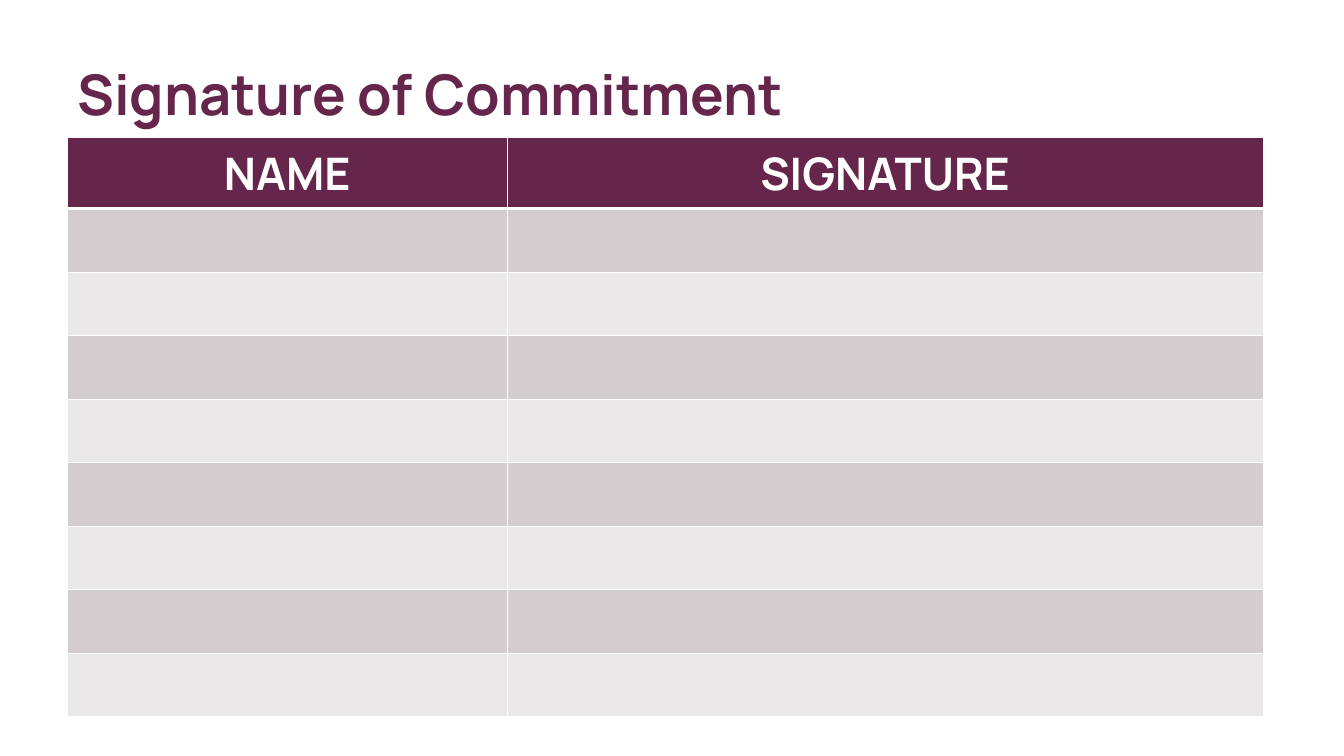
from dataclasses import dataclass

from lxml import etree
from pptx import Presentation
from pptx import util as u
from pptx.dml.color import RGBColor
from pptx.enum import text
from pptx.oxml import ns

PLUM = RGBColor(0x66, 0x25, 0x4A)
WHITE = RGBColor(0xFF, 0xFF, 0xFF)
DARK_BAND = RGBColor(0xD3, 0xCD, 0xD0)
LIGHT_BAND = RGBColor(0xEA, 0xE8, 0xE9)

LEFT = u.Inches(0.67)
HEADER_HEIGHT = u.Inches(0.71)
SIGNER_HEIGHT = u.Inches(0.63)
SIGNER_COUNT = 8


@dataclass(frozen=True)
class Column:
    heading: str
    width: u.Length


COLUMNS = [
    Column("NAME", u.Inches(4.36)),
    Column("SIGNATURE", u.Inches(7.5)),
]


def write(paragraph, wording: str, size: int, color: RGBColor) -> None:
    run = paragraph.add_run()
    run.text = wording
    font_format = {"name": "Manrope", "size": u.Pt(size), "bold": True}
    for attribute, value in font_format.items():
        setattr(run.font, attribute, value)
    run.font.color.rgb = color


def add_borders(cell, top: int, bottom: int) -> None:
    """Draw white cell edges; widths are in points."""
    properties = cell._tc.get_or_add_tcPr()
    for side, width in {"L": 1, "R": 1, "T": top, "B": bottom}.items():
        edge = etree.SubElement(properties, ns.qn(f"a:ln{side}"), w=str(u.Pt(width)))
        fill = etree.SubElement(edge, ns.qn("a:solidFill"))
        etree.SubElement(fill, ns.qn("a:srgbClr"), val=str(WHITE))


def style_cell(cell, row: int) -> None:
    add_borders(cell, top=3 if row == 1 else 1, bottom=3 if row == 0 else 1)
    cell.fill.solid()
    band = DARK_BAND if row % 2 else LIGHT_BAND
    cell.fill.fore_color.rgb = PLUM if row == 0 else band


def add_title(slide) -> None:
    frame = slide.shapes.add_textbox(
        LEFT, u.Inches(0.3), u.Inches(12), u.Inches(1.25)
    ).text_frame
    frame.word_wrap = True
    frame.vertical_anchor = text.MSO_ANCHOR.MIDDLE
    write(frame.paragraphs[0], "Signature of Commitment", 40, PLUM)


def add_signature_table(slide) -> None:
    table = slide.shapes.add_table(
        SIGNER_COUNT + 1,
        len(COLUMNS),
        LEFT,
        u.Inches(1.36),
        sum(column.width for column in COLUMNS),
        HEADER_HEIGHT + SIGNER_COUNT * SIGNER_HEIGHT,
    ).table
    for index, row in enumerate(table.rows):
        row.height = SIGNER_HEIGHT if index else HEADER_HEIGHT
        for cell in row.cells:
            style_cell(cell, index)
    for index, column in enumerate(COLUMNS):
        table.columns[index].width = column.width
        heading = table.cell(0, index).text_frame.paragraphs[0]
        heading.alignment = text.PP_ALIGN.CENTER
        write(heading, column.heading, 32, WHITE)


def main() -> None:
    deck = Presentation()
    deck.slide_width = u.Inches(13.33)
    deck.slide_height = u.Inches(7.5)
    slide = deck.slides.add_slide(deck.slide_layouts[6])
    add_title(slide)
    add_signature_table(slide)
    deck.save("out.pptx")


if __name__ == "__main__":
    main()
